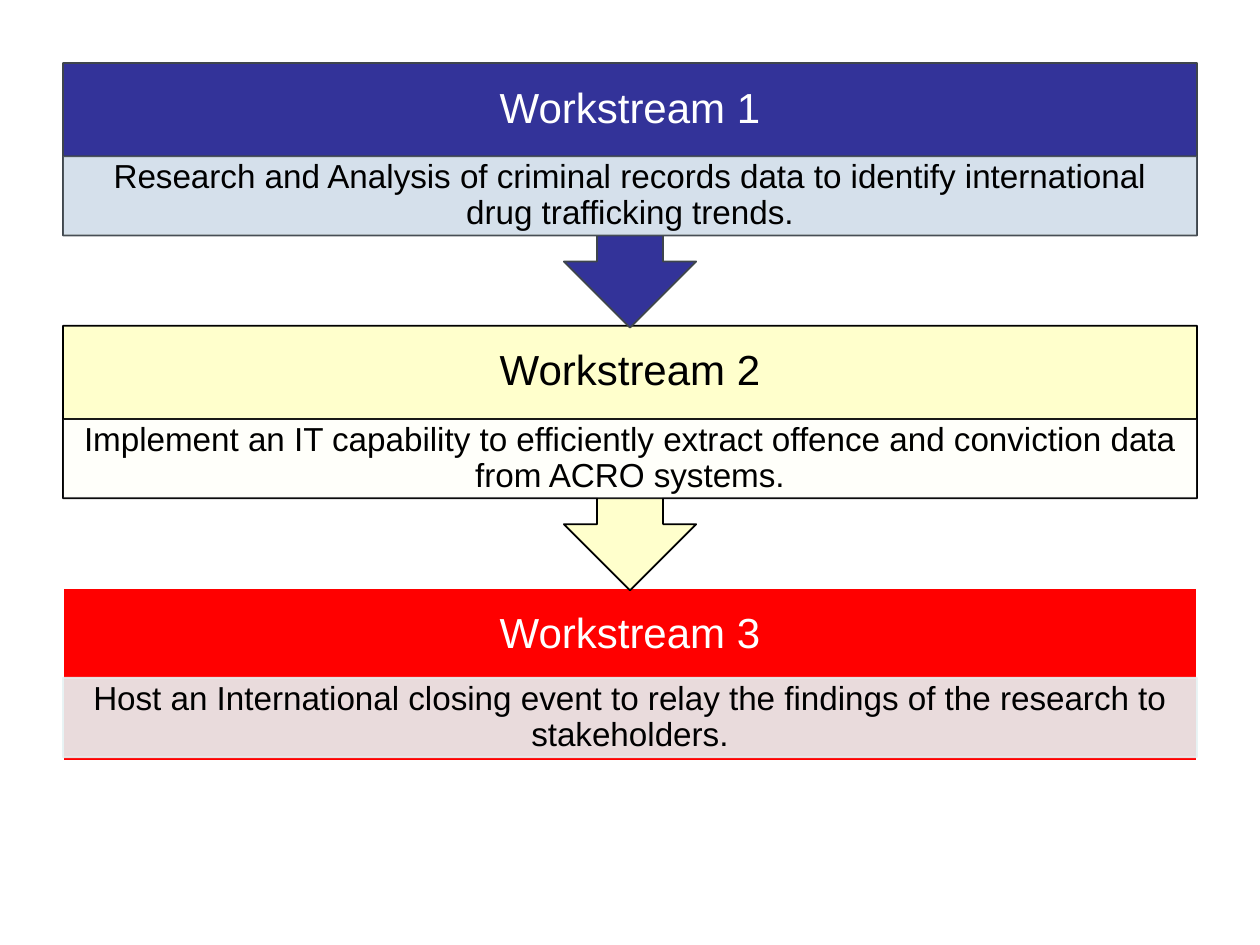
from dataclasses import dataclass

from lxml import etree
from pptx import Presentation
from pptx import util as u
from pptx.dml.color import RGBColor
from pptx.enum import shapes, text
from pptx.oxml.ns import qn


@dataclass(frozen=True)
class Theme:
    font: str = "Arial"
    heading_size: int = 24
    detail_size: int = 19
    line_width: int = 1
    opacity: int = 90
    black: str = "000000"
    white: str = "FFFFFF"
    navy: str = "333399"
    slate: str = "3E454C"
    cream: str = "FFFFCC"
    red: str = "FF0000"
    ice: str = "E7F3F4"


theme = Theme()


def paint(shape, fill, line, opacity=100):
    """Set a flat fill and outline, both at the given opacity in percent."""
    shape.shadow.inherit = False
    shape.fill.solid()
    shape.fill.fore_color.rgb = RGBColor.from_string(fill)
    shape.line.color.rgb = RGBColor.from_string(line)
    shape.line.width = u.Pt(theme.line_width)
    if opacity < 100:
        for color in shape._element.spPr.iter(qn("a:srgbClr")):
            etree.SubElement(color, qn("a:alpha")).set("val", str(opacity * 1000))


def write(shape, words, size, color, margins):
    """Centre one paragraph in the shape; margins are horizontal, vertical inches."""
    frame = shape.text_frame
    frame.text = words
    frame.word_wrap = True
    frame.vertical_anchor = text.MSO_ANCHOR.MIDDLE
    frame.margin_left = frame.margin_right = u.Inches(margins[0])
    frame.margin_top = frame.margin_bottom = u.Inches(margins[1])
    paragraph = frame.paragraphs[0]
    paragraph.alignment = text.PP_ALIGN.CENTER
    paragraph.line_spacing = 0.9
    font = paragraph.runs[0].font
    font.name = theme.font
    font.size = u.Pt(size)
    font.color.rgb = RGBColor.from_string(color)


presentation = Presentation()
presentation.slide_width = u.Inches(10)
presentation.slide_height = u.Inches(7.5)
slide = presentation.slides.add_slide(presentation.slide_layouts[6])

# Grid of 20 columns by 15 rows
column = presentation.slide_width / 20
row = presentation.slide_height / 15
left, width = int(column), int(18 * column)
pitch = 4.17 * row
heading_height = int(1.48 * row)
detail_height = int(1.26 * row)

callout = shapes.MSO_SHAPE.UP_ARROW_CALLOUT
rectangle = shapes.MSO_SHAPE.RECTANGLE

# Outline, rotation, height and detail offset in rows, fill, line,
# heading colour, detail fill, detail line, detail text
workstreams = [
    (callout, 180, 4.2, 1.48, theme.navy, theme.slate, theme.white, theme.ice, theme.slate,
     "Research and Analysis of criminal records data to identify international "
     "drug trafficking trends."),
    (callout, 180, 4.2, 1.48, theme.cream, theme.black, theme.black, theme.white, theme.black,
     "Implement an IT capability to efficiently extract offence and conviction "
     "data from ACRO systems."),
    (rectangle, 0, 2.74, 1.42, theme.red, theme.white, theme.white, theme.ice, theme.ice,
     "Host an International closing event to relay the findings of the research "
     "to stakeholders."),
]

# Last workstream first, so that each arrow lies over the block below it
for number, workstream in reversed(list(enumerate(workstreams, start=1))):
    (outline, rotation, rows, detail_row, fill, line,
     heading_color, detail_fill, detail_line, words) = workstream
    top = int(row + (number - 1) * pitch)

    block = slide.shapes.add_shape(outline, left, top, width, int(rows * row))
    block.rotation = rotation
    paint(block, fill, line)

    heading = slide.shapes.add_textbox(left, top, width, heading_height)
    write(heading, f"Workstream {number}", theme.heading_size, heading_color, (0.19, 0.19))

    detail = slide.shapes.add_shape(
        rectangle, left, int(top + detail_row * row), width, detail_height)
    paint(detail, detail_fill, detail_line, theme.opacity)
    write(detail, words, theme.detail_size, theme.black, (0.15, 0.03))

presentation.save("out.pptx")
